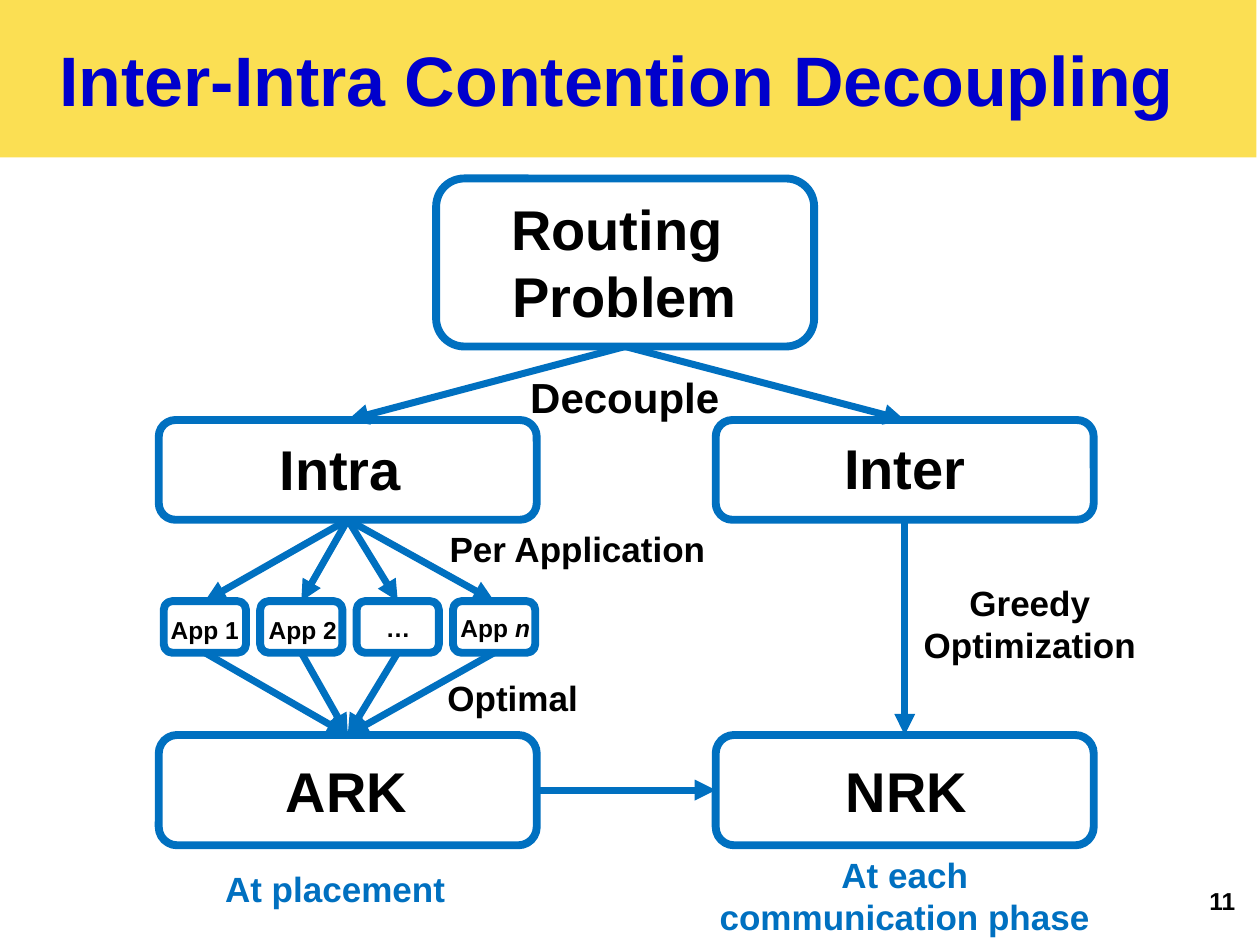
from pptx import Presentation
from pptx.dml.color import RGBColor
from pptx.enum.shapes import MSO_CONNECTOR as Connector, MSO_SHAPE as Shape
from pptx.enum.text import MSO_ANCHOR as Anchor, MSO_AUTO_SIZE as AutoSize, PP_ALIGN as Align
from pptx.oxml.ns import qn
from pptx.util import Pt
from lxml.etree import SubElement

BLACK = RGBColor(0x00, 0x00, 0x00)
WHITE = RGBColor(0xFF, 0xFF, 0xFF)
BLUE = RGBColor(0x00, 0x70, 0xC0)
TITLE_BLUE = RGBColor(0x00, 0x00, 0xCC)
YELLOW = RGBColor(0xFB, 0xDF, 0x53)

TOP, LEFT, BOTTOM, RIGHT = range(4)  # connection sites of a rounded rectangle

INTRA_LEFT, INTER_LEFT, BOX_WIDTH = 90.75, 409, 216
APP_LEFT, APP_PITCH, APP_COUNT = 93.6, 55.1, 4


def format_text(frame, size, color, align=Align.CENTER):
    for para in frame.paragraphs:
        para.alignment = align
        for span in para.runs:
            span.font.name = "Arial"
            span.font.size = Pt(size)
            span.font.bold = True
            span.font.color.rgb = color


def add_title(slide, text):
    title = slide.shapes.title
    title.left, title.top, title.width, title.height = Pt(-2), Pt(0), Pt(720), Pt(90)
    title.fill.solid()
    title.fill.fore_color.rgb = YELLOW
    frame = title.text_frame
    frame.text = text
    frame.auto_size = AutoSize.NONE
    frame.vertical_anchor = Anchor.MIDDLE
    format_text(frame, 40, TITLE_BLUE)


def add_box(slide, left, top, width, height):
    box = slide.shapes.add_shape(Shape.ROUNDED_RECTANGLE, Pt(left), Pt(top), Pt(width), Pt(height))
    box.shadow.inherit = False
    box.fill.solid()
    box.fill.fore_color.rgb = WHITE
    box.line.color.rgb = BLUE
    box.line.width = Pt(4.5)
    return box


def add_arrow(slide, source, target, start=BOTTOM, end=TOP):
    """Glue an arrow from one box's connection site to another's."""
    arrow = slide.shapes.add_connector(Connector.STRAIGHT, 0, 0, 0, 0)
    arrow.begin_connect(source, start)
    arrow.end_connect(target, end)
    arrow.line.color.rgb = BLUE
    arrow.line.width = Pt(4)
    SubElement(arrow.line._get_or_add_ln(), qn("a:tailEnd"), type="triangle")
    SubElement(arrow._element.spPr, qn("a:effectLst"))


def add_label(slide, text, left, top, width, height, size, color=BLACK, wrap=True):
    label = slide.shapes.add_textbox(Pt(left), Pt(top), Pt(width), Pt(height))
    frame = label.text_frame
    frame.word_wrap = wrap
    frame.text = text
    format_text(frame, size, color)
    return label


def add_app_labels(slide):
    for text, left, top, width in (
        ("App 1", 90, 347.75, 54),
        ("App 2", 146, 347.75, 54),
        ("…", 213, 347, 29),
    ):
        add_label(slide, text, left, top, width, 24.5, 14, wrap=False)
    last = add_label(slide, "App ", 255, 347, 56, 24.5, 14, wrap=False)
    para = last.text_frame.paragraphs[0]
    para.add_run().text = "n"
    format_text(last.text_frame, 14, BLACK)
    para.runs[1].font.italic = True


def main():
    deck = Presentation()
    deck.slide_width, deck.slide_height = Pt(720), Pt(540)
    slide = deck.slides.add_slide(deck.slide_layouts[5])
    add_title(slide, "Inter-Intra Contention Decoupling ")

    routing = add_box(slide, 249.25, 102, BOX_WIDTH, 96)
    intra = add_box(slide, INTRA_LEFT, 240, BOX_WIDTH, 57)
    inter = add_box(slide, INTER_LEFT, 240, BOX_WIDTH, 57)
    apps = [add_box(slide, APP_LEFT + i * APP_PITCH, 343.5, 47, 29.5) for i in range(APP_COUNT)]
    ark = add_box(slide, INTRA_LEFT, 420, BOX_WIDTH, 63)
    nrk = add_box(slide, INTER_LEFT, 420, BOX_WIDTH, 63)

    add_arrow(slide, routing, intra)
    add_arrow(slide, routing, inter)
    for app in apps:
        add_arrow(slide, intra, app)
        add_arrow(slide, app, ark)
    add_arrow(slide, inter, nrk)
    add_arrow(slide, ark, nrk, RIGHT, LEFT)

    for text, left, top, width, height, size in (
        ("Routing \nProblem", 267, 107.5, 180, 85, 32),
        ("Intra", 104.5, 245, 180, 46, 32),
        ("Inter", 427, 244, 180, 46, 32),
        ("ARK", 91, 428.5, 214, 46, 32),
        ("NRK", 409, 428.5, 218, 46, 32),
        ("Decouple", 267, 209, 180, 36, 24),
        ("Per Application", 240, 298, 180, 31.5, 20),
        ("Optimal", 203, 383, 180, 31.5, 20),
        ("Greedy Optimization", 498.5, 329, 180, 55.5, 20),
    ):
        add_label(slide, text, left, top, width, height, size)
    add_app_labels(slide)
    add_label(slide, "At placement", 101.5, 492, 180, 31.5, 20, BLUE)
    add_label(slide, "At each communication phase", 400.5, 484, 233, 55.5, 20, BLUE)

    number = add_label(slide, "11", 684, 502.5, 36, 37.5, 14)
    format_text(number.text_frame, 14, BLACK, Align.LEFT)
    deck.save("out.pptx")


if __name__ == "__main__":
    main()
